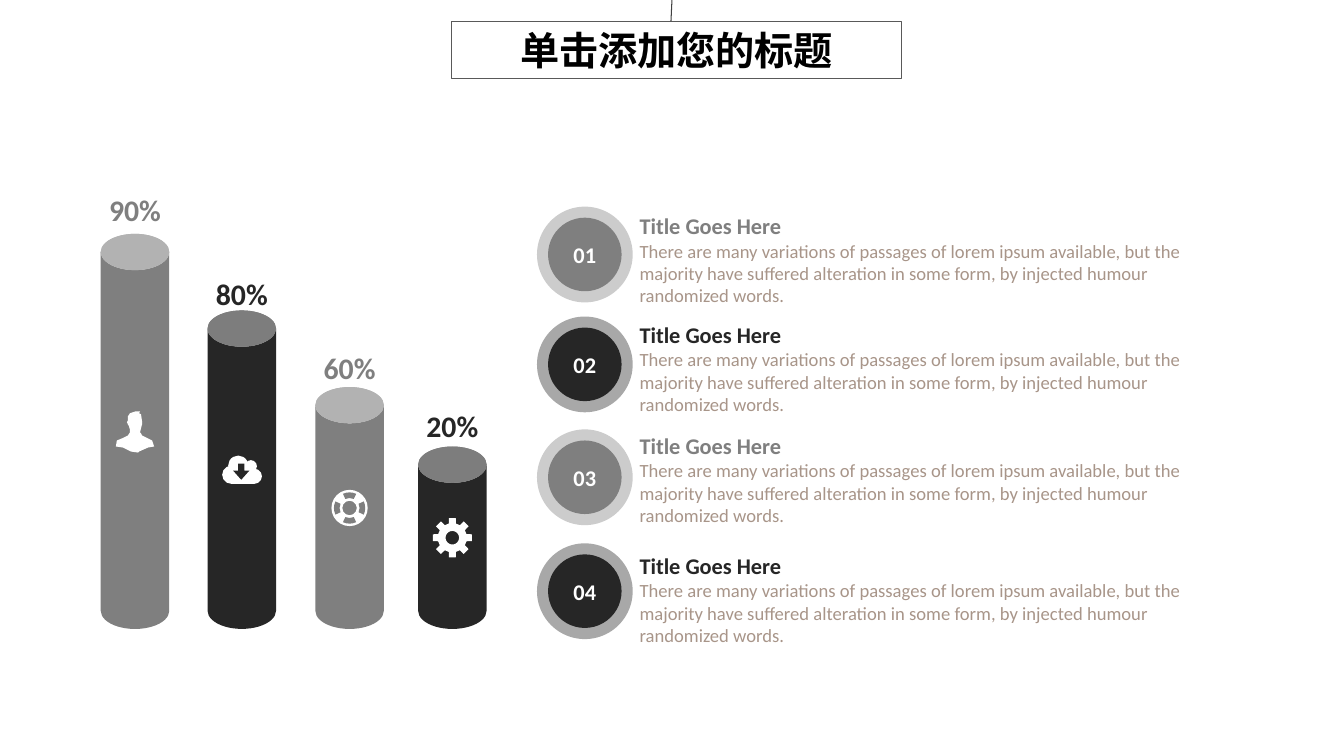
"""Build a slide of four percentage columns beside four numbered notes."""
from math import cos, radians, sin

from pptx import Presentation
from pptx.dml.color import RGBColor
from pptx.enum.shapes import MSO_CONNECTOR, MSO_SHAPE
from pptx.enum.text import MSO_ANCHOR, MSO_AUTO_SIZE, PP_ALIGN
from pptx.oxml.ns import qn
from pptx.util import Inches, Pt

OVAL, CAN, RECT = MSO_SHAPE.OVAL, MSO_SHAPE.CAN, MSO_SHAPE.RECTANGLE
DONUT, ARC, ARROW = MSO_SHAPE.DONUT, MSO_SHAPE.BLOCK_ARC, MSO_SHAPE.DOWN_ARROW
STRAIGHT = MSO_CONNECTOR.STRAIGHT
LEFT, CENTER = PP_ALIGN.LEFT, PP_ALIGN.CENTER
TOP, MIDDLE, BOTTOM = MSO_ANCHOR.TOP, MSO_ANCHOR.MIDDLE, MSO_ANCHOR.BOTTOM
FIXED = MSO_AUTO_SIZE.NONE
TITLE_ONLY = 5
COLUMNS, ROWS = 133.4, 75
COLORS = {
    "gray": "7F7F7F", "gray_top": "B2B2B2", "gray_ring": "CCCCCC",
    "dark": "262626", "dark_top": "7D7D7D", "dark_ring": "A8A8A8",
    "white": "FFFFFF", "black": "000000", "body": "A89589",
    "frame": "595959", "cord": "404040",
}
HEADING = "Title Goes Here"
BODY = ("There are many variations of passages of lorem ipsum available, but the "
        "majority have suffered alteration in some form, by injected humour "
        "randomized words.")
BUST = [(3.6, 3), (2.6, 2.5), (2.5, 2.3), (2.4, 2.2), (2.5, 1.8), (2.6, 1.4),
        (2.6, 1.1), (2.5, .4), (2.3, .3), (2.4, .1), (2, .1), (1.4, .3),
        (1.2, .6), (1.2, 1), (1.1, 1.2), (1.2, 1.4), (1.3, 1.6), (1.4, 1.9),
        (1.4, 2.2), (1.2, 2.5), (.6, 2.8), (.1, 3), (0, 3.6), (.7, 3.7),
        (1.5, 4.1), (2.2, 4.2), (2.3, 4.1), (3.2, 3.7), (3.8, 3.6)]


def rgb(color):
    return RGBColor.from_string(COLORS[color])


class Board:
    """Draws on one slide, in grid cells of a tenth of an inch."""

    def __init__(self, slide, font):
        self.slide, self.shapes, self.font = slide, slide.shapes, font

    def cells(self, *lengths):
        return [Inches(length / 10) for length in lengths]

    def paint(self, shape, fill):
        shape.shadow.inherit = False
        shape.fill.solid()
        shape.fill.fore_color.rgb = rgb(fill)
        shape.line.fill.background()
        return shape

    def preset(self, kind, left, top, width, height, fill, adjust=()):
        shape = self.shapes.add_shape(kind, *self.cells(left, top, width, height))
        for index, value in enumerate(adjust):
            shape.adjustments[index] = value
        return self.paint(shape, fill)

    def circle(self, x, y, radius, fill, kind=OVAL, adjust=()):
        return self.preset(kind, x - radius, y - radius, 2 * radius, 2 * radius,
                           fill, adjust)

    def outline(self, contours, fill):
        points = [[self.cells(*point) for point in contour] for contour in contours]
        builder = self.shapes.build_freeform(*points[0][0])
        builder.add_line_segments(points[0][1:])
        for contour in points[1:]:
            builder.move_to(*contour[0])
            builder.add_line_segments(contour[1:])
        return self.paint(builder.convert_to_shape(), fill)

    def put_lines(self, frame, lines, align=CENTER, anchor=MIDDLE, inset=0, wrap=True):
        frame.auto_size, frame.word_wrap, frame.vertical_anchor = FIXED, wrap, anchor
        frame.margin_left = frame.margin_right = Inches(inset)
        frame.margin_top = frame.margin_bottom = Inches(inset / 2)
        for index, (words, size, color, bold) in enumerate(lines):
            line = frame.add_paragraph() if index else frame.paragraphs[0]
            line.text, line.alignment = words, align
            line.font.name, line.font.size, line.font.bold = self.font, Pt(size), bold
            line.font.color.rgb = rgb(color)

    def text(self, left, top, width, height, lines, **style):
        box = self.shapes.add_textbox(*self.cells(left, top, width, height))
        self.put_lines(box.text_frame, lines, **style)

    def title(self, left, top, width, height, words):
        title = self.shapes.title
        title.left, title.top, title.width, title.height = self.cells(
            left, top, width, height)
        title.line.color.rgb, title.line.width = rgb("frame"), Pt(.75)
        self.put_lines(title.text_frame, [(words, 28, "black", True)],
                       anchor=TOP, inset=.1)

    def cord(self, *ends):
        cord = self.shapes.add_connector(STRAIGHT, *self.cells(*ends))
        cord.line.color.rgb, cord.line.width = rgb("cord"), Pt(.75)
        properties = cord.element.spPr
        properties.append(properties.makeelement(qn("a:effectLst"), {}))

    def column(self, left, top, label_top, percent, tone, icon):
        width, base, rim = 6.8, 62.4, 3.6
        self.preset(CAN, left, top, width, base - top, tone, [rim / width])
        self.preset(OVAL, left, top, width, rim, tone + "_top")
        self.text(left + .8, label_top, 5.2, 3.6, [(percent, 21.3, tone, True)],
                  anchor=BOTTOM, wrap=False)
        icon(self, left + width / 2, (top + base) / 2, tone)

    def note(self, number, ring_top, text_top, tone):
        x, y = 58.05, ring_top + 4.75
        self.circle(x, y, 4.75, tone + "_ring")
        disc = self.circle(x, y, 3.65, tone)
        self.put_lines(disc.text_frame, [(f"{number:02}", 16, "white", True)])
        self.text(62.5, text_top, 61.3, 10.4,
                  [(HEADING, 16, tone, True), (BODY, 13.3, "body", False)],
                  align=LEFT, anchor=TOP, inset=.1)


def polar(x, y, radius, degrees):
    return x + radius * cos(radians(degrees)), y + radius * sin(radians(degrees))


def person(board, x, y, tone):
    board.outline([[(x - 1.9 + dx, y - 2.1 + dy) for dx, dy in BUST]], "white")


def cloud(board, x, y, tone):
    for dx, dy, radius in ((-1.05, .5, .9), (-.35, -.4, 1), (.9, -.35, .6), (1.25, .65, .75)):
        board.circle(x + dx, y + dy, radius, "white")
    board.preset(RECT, x - 1.05, y - .1, 2.3, 1.5, "white")
    board.preset(ARROW, x - .85, y - .6, 1.6, 1.6, tone, [.38, .56])


def lifebuoy(board, x, y, tone):
    board.circle(x, y, 1.8, "white", DONUT, [.3])
    for middle in range(0, 360, 90):
        start, end = (middle - 25) % 360, middle + 25
        board.circle(x, y, 1.55, tone, ARC, [start * .6, end * .6, .18])


def gear(board, x, y, tone):
    teeth = [polar(x, y, radius, middle + offset)
             for middle in range(0, 360, 45)
             for radius, offset in ((1.45, -14), (1.97, -10), (1.97, 10), (1.45, 14))]
    hole = [polar(x, y, .67, angle) for angle in range(360, 0, -15)]
    board.outline([teeth, hole], "white")


def main():
    deck = Presentation()
    deck.slide_width, deck.slide_height = Inches(COLUMNS / 10), Inches(ROWS / 10)
    board = Board(deck.slides.add_slide(deck.slide_layouts[TITLE_ONLY]), "Calibri")
    for column in (
        (10, 23.2, 19, "90%", "gray", person),
        (20.6, 30.8, 27.3, "80%", "dark", cloud),
        (31.3, 38.4, 34.6, "60%", "gray", lifebuoy),
        (41.5, 44.3, 40.4, "20%", "dark", gear),
    ):
        board.column(*column)
    for number, note in enumerate((
        (20.5, 20.6, "gray"), (31.4, 31.4, "dark"),
        (42.6, 42.4, "gray"), (53.9, 54.3, "dark"),
    ), 1):
        board.note(number, *note)
    board.title(44.8, 2.1, 44.7, 5.7, "单击添加您的标题")
    board.cord(66.7, 0, 66.6, 2.1)
    deck.save("out.pptx")


if __name__ == "__main__":
    main()
